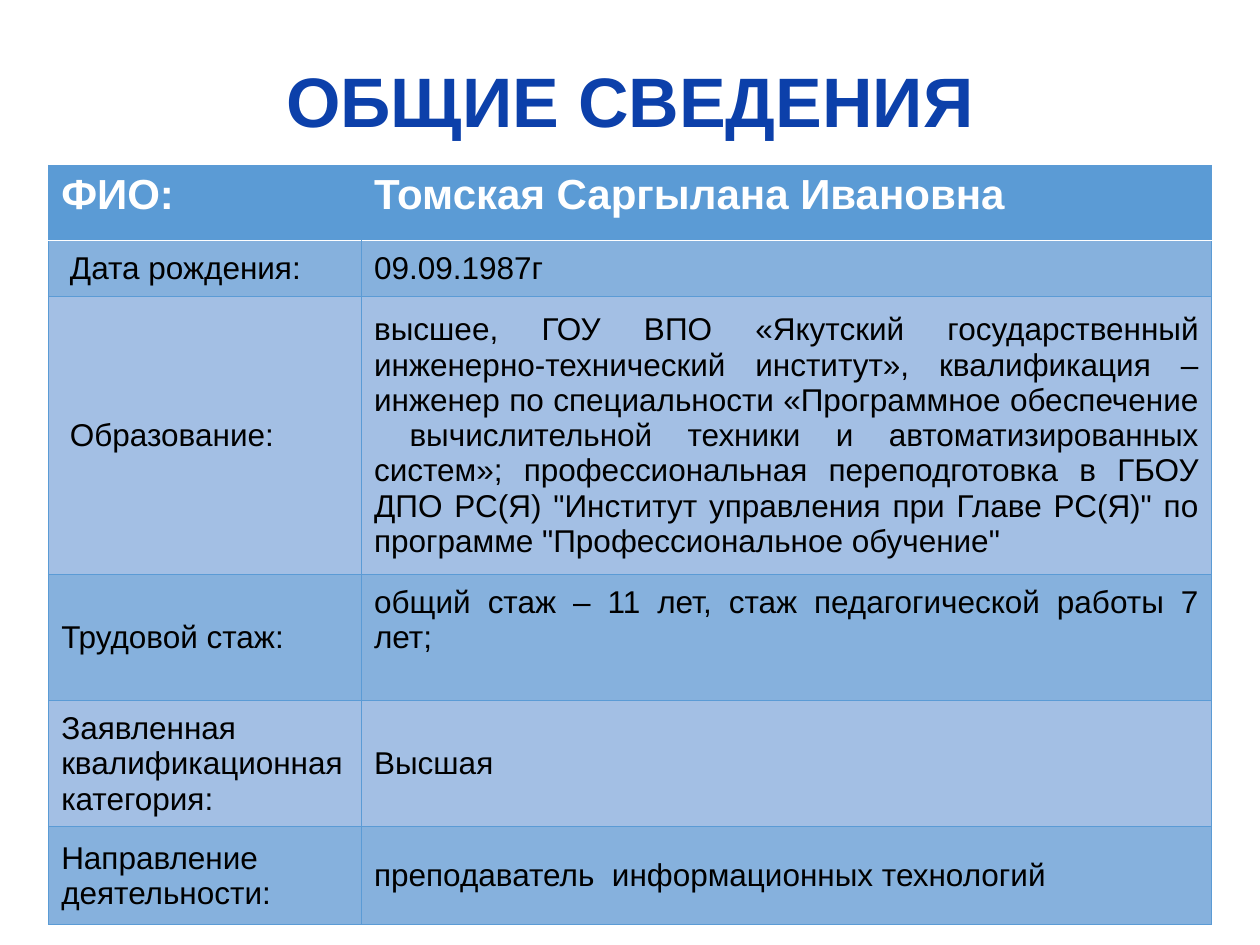
from lxml.etree import SubElement
from pptx import Presentation
from pptx.dml.color import RGBColor
from pptx.enum.text import MSO_ANCHOR, PP_ALIGN
from pptx.oxml import parse_xml
from pptx.oxml.ns import nsdecls
from pptx.util import Pt

HUES = {"title": "0C40AA", "head": "5B9BD5", "dark": "86B1DD",
        "light": "A3BFE4", "white": "FFFFFF", "black": "000000"}
ROWS = [
    (43, "ФИО:", "Томская Саргылана Ивановна"),
    (32, "Дата рождения:", "09.09.1987г"),
    (159, "Образование:",
     "высшее, ГОУ ВПО «Якутский государственный инженерно-технический "
     "институт», квалификация – инженер по специальности «Программное "
     "обеспечение  вычислительной техники и автоматизированных систем»; "
     "профессиональная переподготовка в ГБОУ ДПО РС(Я) \"Институт управления "
     "при Главе РС(Я)\" по программе \"Профессиональное обучение\""),
    (72, "Трудовой стаж:",
     "общий стаж – 11 лет, стаж педагогической работы 7 лет;"),
    (72, "Заявленная квалификационная категория:", "Высшая"),
    (56, "Направление\nдеятельности:",
     "преподаватель  информационных технологий"),
]
INSET = ("Дата рождения:", "Образование:")


def style(para, size, hue, bold, align):
    para.alignment = align
    font = para.font
    font.name, font.size, font.bold = "Arial", Pt(size), bold
    font.color.rgb = RGBColor.from_string(HUES[hue])


def edge(cell, sides):
    """Draw cell borders; sides maps L, R, T, B, in that order, to (hue, width)."""
    props = cell._tc.get_or_add_tcPr()
    for spot, (side, (hue, width)) in enumerate(sides.items()):
        line = parse_xml(f'<a:ln{side} {nsdecls("a")} w="{Pt(width)}"/>')
        space = "{" + line.nsmap["a"] + "}"
        if hue:
            fill = SubElement(line, space + "solidFill")
            SubElement(fill, space + "srgbClr", val=HUES[hue])
        else:
            SubElement(line, space + "noFill")
        props.insert(spot, line)


prs = Presentation()
prs.slide_width, prs.slide_height = Pt(720), Pt(540)
slide = prs.slides.add_slide(prs.slide_layouts[6])

box = slide.shapes.add_textbox(Pt(0), Pt(29.5), Pt(720), Pt(55.5))
box.text_frame.word_wrap = True
box.text_frame.text = "ОБЩИЕ СВЕДЕНИЯ"
style(box.text_frame.paragraphs[0], 40, "title", True, PP_ALIGN.CENTER)

high = sum(row[0] for row in ROWS)
table = slide.shapes.add_table(len(ROWS), 2, Pt(27.8), Pt(94.5),
                               Pt(664.6), Pt(high)).table
table.columns[0].width, table.columns[1].width = Pt(178.8), Pt(485.8)

blue, white, none = ("head", 0.5), ("white", 1), (None, 0)
for i, (tall, *texts) in enumerate(ROWS):
    table.rows[i].height = Pt(tall)
    head = i == 0
    for j, text in enumerate(texts):
        cell = table.cell(i, j)
        cell.text = text
        cell.vertical_anchor = MSO_ANCHOR.TOP if head else MSO_ANCHOR.MIDDLE
        cell.fill.solid()
        hue = "head" if head else "dark" if i % 2 else "light"
        cell.fill.fore_color.rgb = RGBColor.from_string(HUES[hue])
        for para in cell.text_frame.paragraphs:
            style(para, 24 if head else 18, "white" if head else "black",
                  head, PP_ALIGN.JUSTIFY)
        if text in INSET:
            cell.margin_left = Pt(12.2)
        edge(cell, {"L": none if head and j == 1 else blue,
                    "R": none if head and j == 0 else blue,
                    "T": white if i == 1 else blue,
                    "B": white if head else blue})

# The work record sits at the top of its tall row
record = table.cell(3, 1)
record.vertical_anchor = MSO_ANCHOR.TOP
record.margin_top = Pt(5.7)

prs.save("out.pptx")
